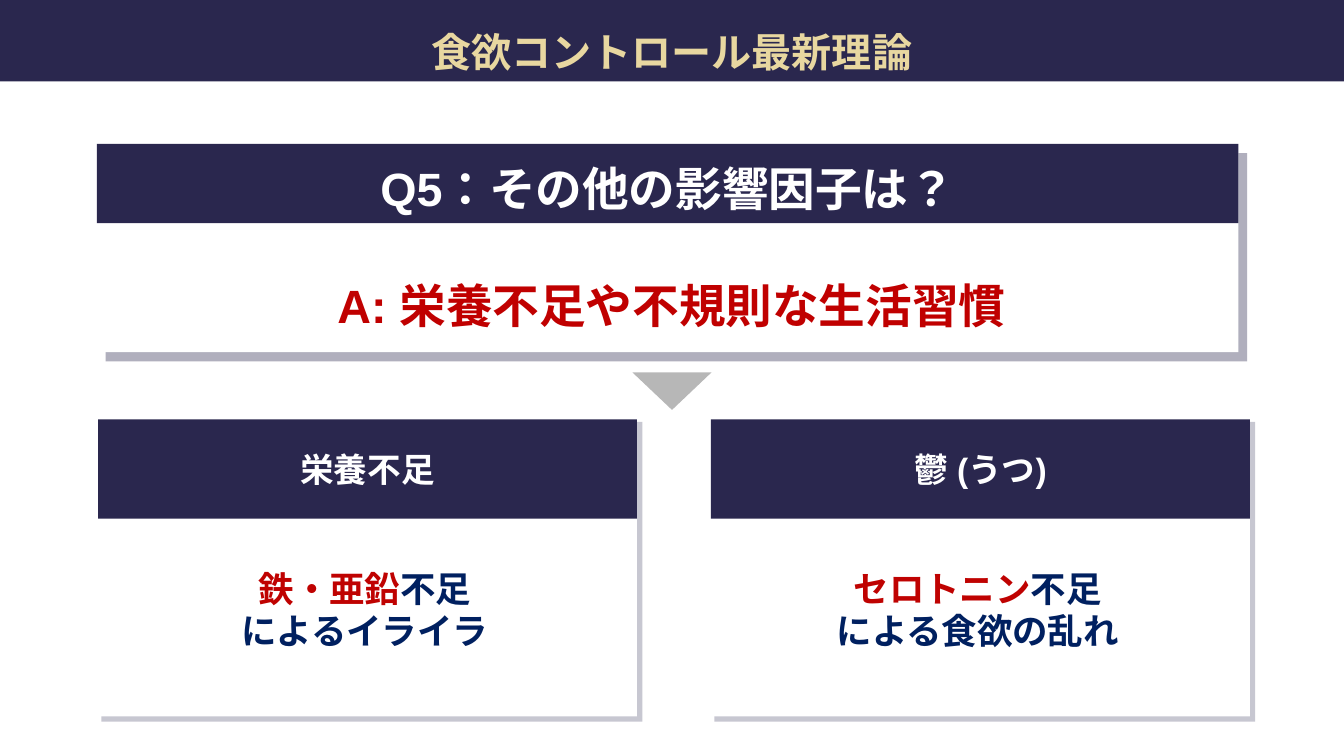
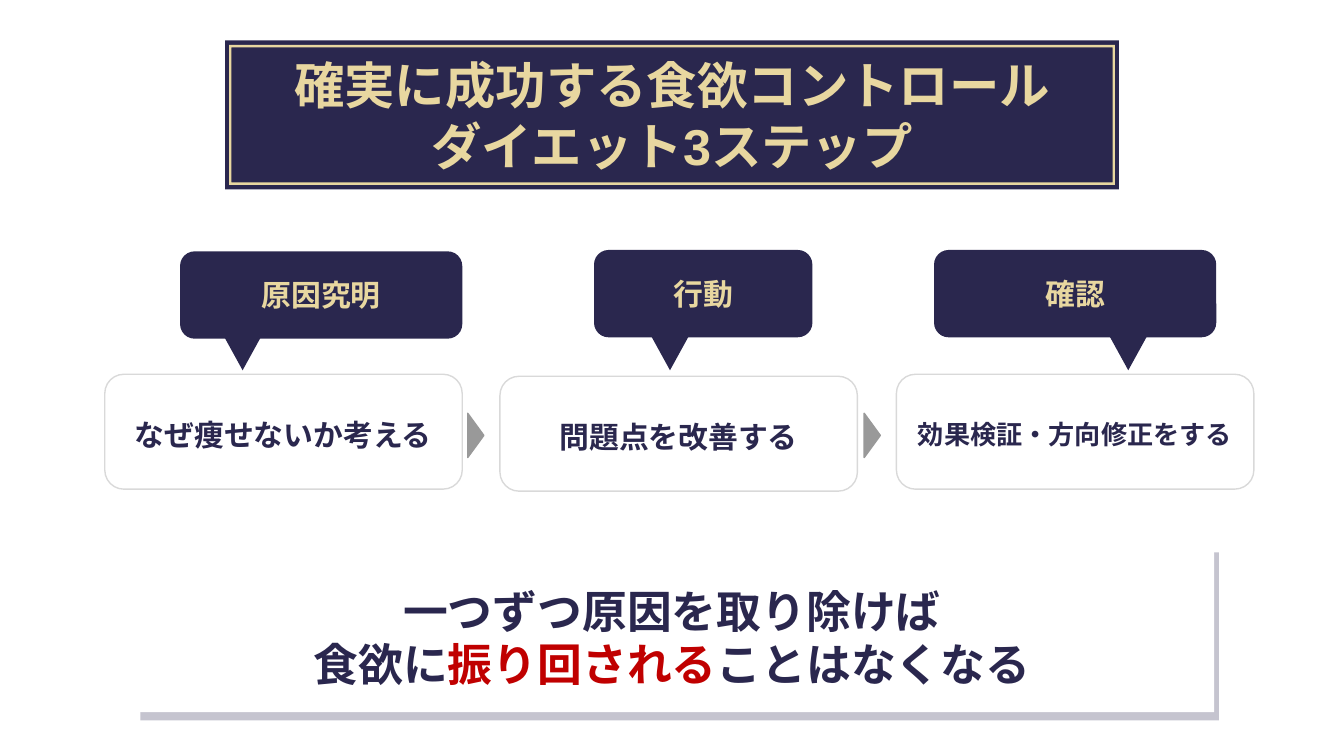
"""Build two slides on appetite control: a question with its factors, and three steps."""
from dataclasses import dataclass
from typing import NamedTuple, Optional

import lxml.etree
import pptx
import pptx.dml.color
import pptx.enum.lang
import pptx.enum.shapes
import pptx.enum.text
import pptx.oxml.ns
import pptx.shapes.autoshape
import pptx.shapes.shapetree
import pptx.util

RGBColor = pptx.dml.color.RGBColor
Shape = pptx.shapes.autoshape.Shape
Shapes = pptx.shapes.shapetree.SlideShapes
Kind = pptx.enum.shapes.MSO_SHAPE
Anchor = pptx.enum.text.MSO_ANCHOR

EMU_PER_PX = 4572
SLIDE_WIDTH, SLIDE_HEIGHT = 2000, 1125
INSET = 20
FONT = "Arial"

NAVY = RGBColor(0x2A, 0x27, 0x4E)
GOLD = RGBColor(0xE8, 0xD7, 0xA0)
WHITE = RGBColor(0xFF, 0xFF, 0xFF)
RED = RGBColor(0xC0, 0x00, 0x00)
CARD_RED = RGBColor(0xBF, 0x02, 0x01)
CARD_BLUE = RGBColor(0x00, 0x20, 0x60)
POINTER_GREY = RGBColor(0xB7, 0xB7, 0xB7)
ARROW_GREY = RGBColor(0x99, 0x99, 0x99)
BORDER_GREY = RGBColor(0xD9, 0xD9, 0xD9)


class Box(NamedTuple):
    left: int
    top: int
    width: int
    height: int

    def moved(self, dx: int) -> "Box":
        return self._replace(left=self.left + dx)

    def emu(self) -> list[int]:
        return [px(length) for length in self]


class Run(NamedTuple):
    text: str
    color: Optional[RGBColor] = None


Lines = list[list[Run]]


@dataclass(frozen=True)
class Factor:
    heading: str
    cause: str
    effect: str


@dataclass(frozen=True)
class Step:
    label: str
    label_box: Box
    tail_left: int
    action: str
    action_left: int
    action_top: int
    action_size: int


FACTORS = [
    Factor("栄養不足", "鉄・亜鉛", "によるイライラ"),
    Factor("鬱 (うつ)", "セロトニン", "による食欲の乱れ"),
]
FACTOR_PITCH = 912

STEPS = [
    Step("原因究明", Box(268, 374, 420, 130), 328, "なぜ痩せないか考える", 156, 557, 16),
    Step("行動", Box(884, 372, 325, 130), 964, "問題点を改善する", 744, 560, 16),
    Step("確認", Box(1390, 372, 420, 130), 1646, "効果検証・方向修正をする", 1334, 557, 14),
]
STEP_PITCH = 590


def px(length: int) -> int:
    return pptx.util.Emu(length * EMU_PER_PX)


def write(shape: Shape, text: str | Lines, *, size: float, color: RGBColor,
          spacing: float = 1.0, anchor: Anchor = Anchor.MIDDLE, grow: bool = False) -> None:
    frame = shape.text_frame
    frame.word_wrap = True
    frame.vertical_anchor = anchor
    frame.margin_left = frame.margin_right = px(INSET)
    frame.margin_top = frame.margin_bottom = px(INSET)
    if grow:
        frame.auto_size = pptx.enum.text.MSO_AUTO_SIZE.SHAPE_TO_FIT_TEXT
    lines = [[Run(text)]] if isinstance(text, str) else text
    for index, line in enumerate(lines):
        paragraph = frame.paragraphs[0] if index == 0 else frame.add_paragraph()
        paragraph.alignment = pptx.enum.text.PP_ALIGN.CENTER
        paragraph.line_spacing = spacing
        for part in line:
            run = paragraph.add_run()
            run.text = part.text
            run.font.name = FONT
            run.font.size = pptx.util.Pt(size)
            run.font.bold = True
            run.font.color.rgb = part.color or color
            run.font.language_id = pptx.enum.lang.MSO_LANGUAGE_ID.JAPANESE
            latin = run.font._element.find(pptx.oxml.ns.qn("a:latin"))
            east_asian = lxml.etree.Element(pptx.oxml.ns.qn("a:ea"), typeface=FONT)
            latin.addnext(east_asian)


def draw(shapes: Shapes, box: Box, fill: RGBColor, *, kind: Kind = Kind.RECTANGLE,
         line: Optional[RGBColor] = None, rotation: int = 0,
         opacity: int = 100, adjustment: Optional[float] = None) -> Shape:
    shape = shapes.add_shape(kind, *box.emu())
    shape.shadow.inherit = False
    shape.rotation = rotation
    shape.fill.solid()
    shape.fill.fore_color.rgb = fill
    if line is None:
        shape.line.fill.background()
    else:
        shape.line.color.rgb = line
        shape.line.width = pptx.util.Pt(0.75)
    if adjustment is not None:
        shape.adjustments[0] = adjustment
    if opacity < 100:
        tint = shape.element.spPr.find(pptx.oxml.ns.qn("a:solidFill"))[0]
        alpha = lxml.etree.SubElement(tint, pptx.oxml.ns.qn("a:alpha"))
        alpha.set("val", str(opacity * 1000))
    return shape


def draw_panel(shapes: Shapes, face: Box, shade: Box, opacity: int) -> None:
    draw(shapes, shade, NAVY, opacity=opacity)
    draw(shapes, face, WHITE)


def add_label(shapes: Shapes, box: Box) -> Shape:
    return shapes.add_textbox(*box.emu())


def draw_factor(shapes: Shapes, factor: Factor, dx: int) -> None:
    draw_panel(shapes, Box(140, 650, 808, 416).moved(dx), Box(151, 628, 805, 446).moved(dx), 26)
    explanation = [[Run(factor.cause, CARD_RED), Run("不足")], [Run(factor.effect)]]
    write(add_label(shapes, Box(196, 842, 694, 130).moved(dx)), explanation,
          size=19, color=CARD_BLUE)
    heading = draw(shapes, Box(146, 624, 802, 148).moved(dx), NAVY)
    write(heading, factor.heading, size=18, color=WHITE)


def draw_label(shapes: Shapes, step: Step) -> None:
    label = draw(shapes, step.label_box, NAVY, kind=Kind.ROUNDED_RECTANGLE)
    write(label, step.label, size=16, color=GOLD)
    draw(shapes, Box(step.tail_left, 491, 66, 60), NAVY,
         kind=Kind.ISOSCELES_TRIANGLE, rotation=180)


def draw_action(shapes: Shapes, step: Step) -> None:
    action = draw(shapes, Box(step.action_left, step.action_top, 532, 171), WHITE,
                  kind=Kind.ROUNDED_RECTANGLE, line=BORDER_GREY)
    write(action, step.action, size=step.action_size, color=NAVY, spacing=1.15)


def build_question(shapes: Shapes) -> None:
    draw_panel(shapes, Box(144, 214, 1699, 310), Box(157, 228, 1699, 310), 37)
    question = draw(shapes, Box(144, 214, 1699, 118), NAVY)
    write(question, "Q5：その他の影響因子は？", size=25, color=WHITE, spacing=1.15)
    write(add_label(shapes, Box(150, 350, 1698, 166)), "A: 栄養不足や不規則な生活習慣",
          size=25, color=RED, spacing=1.5, anchor=Anchor.TOP, grow=True)
    draw(shapes, Box(941, 554, 118, 56), POINTER_GREY,
         kind=Kind.ISOSCELES_TRIANGLE, rotation=180)
    title_band = draw(shapes, Box(0, 0, SLIDE_WIDTH, 121), NAVY)
    write(title_band, "食欲コントロール最新理論", size=21.5, color=GOLD,
          spacing=1.3, anchor=Anchor.TOP)
    for index, factor in enumerate(FACTORS):
        draw_factor(shapes, factor, index * FACTOR_PITCH)


def build_steps(shapes: Shapes) -> None:
    draw_panel(shapes, Box(184, 810, 1623, 250), Box(209, 822, 1605, 250), 27)
    plaque = shapes.add_group_shape().shapes
    draw(plaque, Box(335, 60, 1330, 222), NAVY)
    draw(plaque, Box(341, 67, 1318, 208), GOLD, kind=Kind.FRAME, adjustment=0.017)
    title = [[Run("確実に成功する食欲コントロール")], [Run("ダイエット3ステップ")]]
    write(add_label(shapes, Box(361, 60, 1278, 222)), title, size=27, color=GOLD, grow=True)
    for step in STEPS:
        draw_action(shapes, step)
    for gap in range(len(STEPS) - 1):
        draw(shapes, Box(675, 636, 66, 24).moved(gap * STEP_PITCH), ARROW_GREY,
             kind=Kind.ISOSCELES_TRIANGLE, line=ARROW_GREY, rotation=90)
    for step in STEPS:
        draw_label(shapes, step)
    conclusion = [
        [Run("一つずつ原因を取り除けば")],
        [Run("食欲に"), Run("振り回される", RED), Run("ことはなくなる")],
    ]
    write(add_label(shapes, Box(0, 848, SLIDE_WIDTH, 202)), conclusion,
          size=24, color=NAVY, anchor=Anchor.TOP, grow=True)


def main() -> None:
    deck = pptx.Presentation()
    deck.slide_width, deck.slide_height = px(SLIDE_WIDTH), px(SLIDE_HEIGHT)
    blank = deck.slide_layouts[6]
    for build in (build_question, build_steps):
        build(deck.slides.add_slide(blank).shapes)
    deck.save("out.pptx")


if __name__ == "__main__":
    main()
